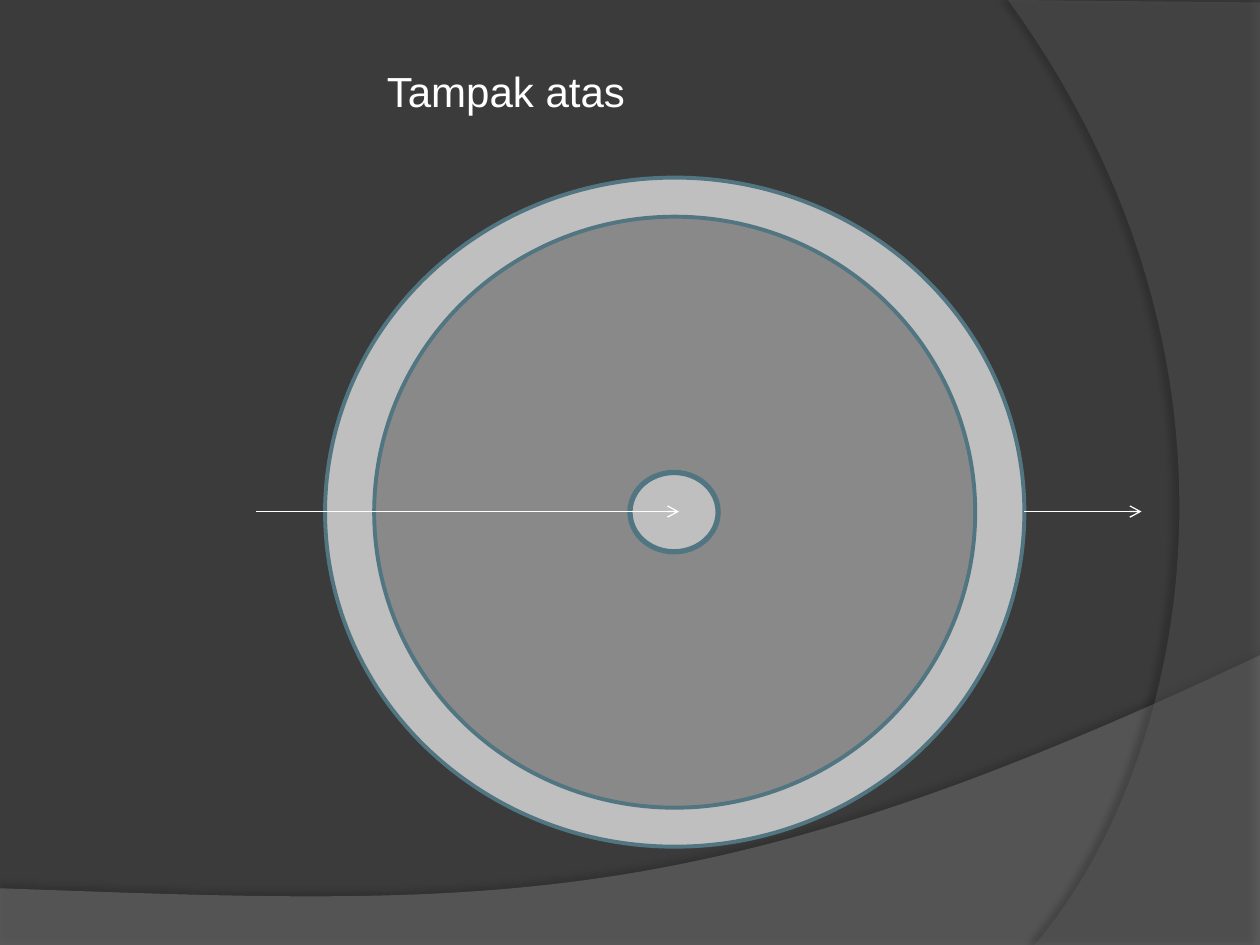
from typing import NamedTuple

from lxml import etree
from pptx import Presentation
from pptx.dml.color import RGBColor
from pptx.enum import shapes, text
from pptx.oxml.ns import qn
from pptx.util import Inches, Pt

BACKGROUND = RGBColor(0x3B, 0x3B, 0x3B)
WAVE = RGBColor(0x7F, 0x7F, 0x7F)
ARC = RGBColor(0x5E, 0x5E, 0x5E)
LIGHT = RGBColor(0xBF, 0xBF, 0xBF)
MID = RGBColor(0x89, 0x89, 0x89)
OUTLINE = RGBColor(0x51, 0x76, 0x82)
WHITE = RGBColor(0xFF, 0xFF, 0xFF)

Point = tuple[float, float]


class Swoosh(NamedTuple):
    points: list[Point]
    color: RGBColor
    opacity: int
    shadow_opacity: int
    shadow_distance: float
    shadow_angle: int


class Disc(NamedTuple):
    left: float
    top: float
    width: float
    height: float
    fill: RGBColor
    line_width: float


class Arrow(NamedTuple):
    start: float
    end: float
    y: float = 4.06


def bezier(p0: Point, p1: Point, p2: Point, p3: Point, steps: int = 60) -> list[Point]:
    """Sample a cubic curve, both ends included."""
    points = []
    for i in range(steps + 1):
        t = i / steps
        weights = ((1 - t) ** 3, 3 * t * (1 - t) ** 2, 3 * t * t * (1 - t), t ** 3)
        x, y = (sum(w * c for w, c in zip(weights, axis)) for axis in zip(p0, p1, p2, p3))
        points.append((x, y))
    return points


SWOOSHES = [
    Swoosh([(0, 7.51), (10, 7.51)]
           + bezier((10, 5.2), (5.59, 7.29), (3.91, 7.19), (0, 7.05)),
           WAVE, 45, 35, 3.5, 270),
    Swoosh([(10, 0.02), (10, 7.5)]
           + bezier((8.21, 7.5), (9.35, 6.19), (10.18, 3), (8, 0)),
           ARC, 40, 45, 4, 180),
]
DISCS = [
    Disc(2.58, 1.41, 5.55, 5.31, LIGHT, 2.25),
    Disc(2.97, 1.72, 4.77, 4.69, MID, 2.25),
    Disc(5, 3.75, 0.7, 0.63, LIGHT, 3),
]
ARROWS = [Arrow(8.13, 9.06), Arrow(2.03, 5.39)]


def add_alpha(color: etree._Element, percent: int) -> None:
    etree.SubElement(color, qn("a:alpha"), val=str(percent * 1000))


def draw_swoosh(s, swoosh: Swoosh) -> None:
    points = [(Inches(x), Inches(y)) for x, y in swoosh.points]
    builder = s.shapes.build_freeform(*points[0])
    builder.add_line_segments(points[1:], close=True)
    sp = builder.convert_to_shape()
    sp.fill.solid()
    sp.fill.fore_color.rgb = swoosh.color
    sp.line.fill.background()
    sp.shadow.inherit = False
    props = sp._element.spPr
    add_alpha(props.find(qn("a:solidFill")).find(qn("a:srgbClr")), swoosh.opacity)
    shadow = etree.SubElement(
        props.find(qn("a:effectLst")), qn("a:outerShdw"), blurRad=str(Pt(4)),
        dist=str(Pt(swoosh.shadow_distance)), dir=str(swoosh.shadow_angle * 60000),
        algn="ctr", rotWithShape="0")
    add_alpha(etree.SubElement(shadow, qn("a:srgbClr"), val="000000"), swoosh.shadow_opacity)


def draw_disc(s, disc: Disc) -> None:
    sp = s.shapes.add_shape(shapes.MSO_SHAPE.OVAL, Inches(disc.left), Inches(disc.top),
                            Inches(disc.width), Inches(disc.height))
    sp.shadow.inherit = False
    sp.fill.solid()
    sp.fill.fore_color.rgb = disc.fill
    sp.line.color.rgb = OUTLINE
    sp.line.width = Pt(disc.line_width)


def draw_arrow(s, arrow: Arrow) -> None:
    line = s.shapes.add_connector(shapes.MSO_CONNECTOR.STRAIGHT, Inches(arrow.start),
                                  Inches(arrow.y), Inches(arrow.end), Inches(arrow.y))
    line.line.color.rgb = WHITE
    line.line.width = Pt(0.75)
    props = line._element.spPr
    etree.SubElement(props.find(qn("a:ln")), qn("a:tailEnd"), type="arrow")
    etree.SubElement(props, qn("a:effectLst"))


def set_title(s, wording: str) -> None:
    title = s.shapes.title
    title.left, title.top = Inches(2.97), Inches(0.47)
    title.width, title.height = Inches(3.83), Inches(0.5)
    tf = title.text_frame
    tf.text = wording
    tf.word_wrap = True
    tf.auto_size = text.MSO_AUTO_SIZE.SHAPE_TO_FIT_TEXT
    tf.vertical_anchor = text.MSO_ANCHOR.TOP
    p = tf.paragraphs[0]
    p.alignment = text.PP_ALIGN.LEFT
    p.font.name = "Arial"
    p.font.size = Pt(24)
    p.font.color.rgb = WHITE


def main() -> None:
    prs = Presentation()
    prs.slide_width, prs.slide_height = Inches(10), Inches(7.5)
    s = prs.slides.add_slide(prs.slide_layouts[5])
    s.background.fill.solid()
    s.background.fill.fore_color.rgb = BACKGROUND
    set_title(s, "Tampak atas")
    for swoosh in SWOOSHES:
        draw_swoosh(s, swoosh)
    for disc in DISCS:
        draw_disc(s, disc)
    for arrow in ARROWS:
        draw_arrow(s, arrow)
    prs.save("out.pptx")


if __name__ == "__main__":
    main()
